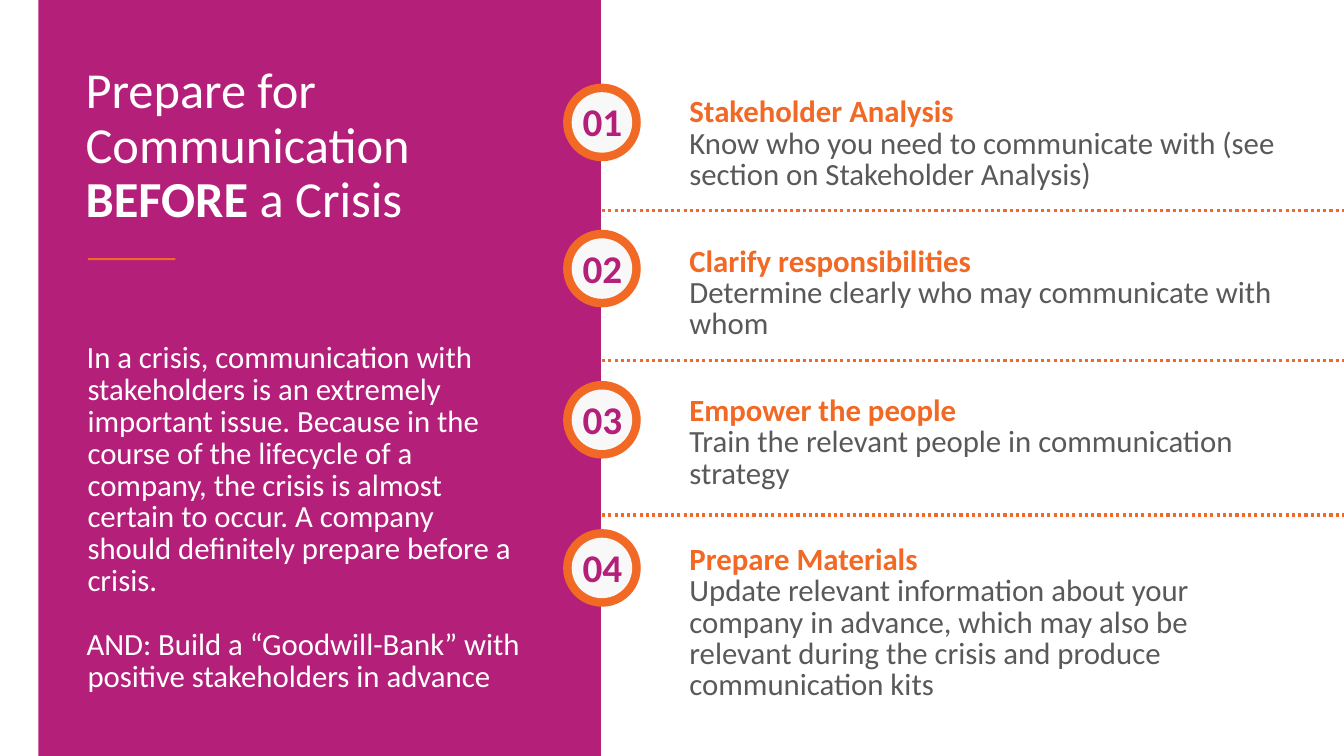
from dataclasses import dataclass

from lxml.etree import SubElement
from pptx import Presentation
from pptx.dml.color import RGBColor
from pptx.enum.dml import MSO_LINE
from pptx.enum.shapes import MSO_CONNECTOR, MSO_SHAPE
from pptx.oxml.ns import qn
from pptx.util import Inches, Pt

WIDTH, HEIGHT = Inches(13.33), Inches(7.5)


@dataclass(frozen=True)
class Theme:
    font: str = "Calibri"
    magenta: str = "B41F7A"
    orange: str = "F16924"
    grey: str = "595959"
    pale: str = "F8F8F8"
    white: str = "FFFFFF"
    title_size: float = 36
    number_size: float = 28
    body_size: float = 22


THEME = Theme()
AXIS = 44.79  # percent of the width where badges and dividers meet the panel
BADGE_CENTRES = (16.2, 35.53, 55.53, 75.13)
DIVIDERS = (27.87, 47.73, 68.13)

TITLE = [[("Prepare for Communication ", {}), ("BEFORE ", {"bold": True}), ("a Crisis", {})]]
INTRODUCTION = [
    "In a crisis, communication with stakeholders is an extremely important issue. "
    "Because in the course of the lifecycle of a company, the crisis is almost certain "
    "to occur. A company should definitely prepare before a crisis.",
    "AND: Build a “Goodwill-Bank” with positive stakeholders in advance",
]
STEPS = [
    ("Stakeholder Analysis",
     "Know who you need to communicate with (see section on Stakeholder Analysis)"),
    ("Clarify responsibilities",
     "Determine clearly who may communicate with whom"),
    ("Empower the people",
     "Train the relevant people in communication strategy"),
    ("Prepare Materials",
     "Update relevant information about your company in advance, which may also be "
     "relevant during the crisis and produce communication kits"),
]


def across(percent):
    return round(WIDTH * percent / 100)


def down(percent):
    return round(HEIGHT * percent / 100)


def place(left, top, width, height):
    """Turn percentages of the slide into a box in slide units."""
    return across(left), down(top), across(width), down(height)


def add_filled(shapes, kind, box, color):
    shape = shapes.add_shape(kind, *box)
    shape.shadow.inherit = False
    shape.fill.solid()
    shape.fill.fore_color.rgb = RGBColor.from_string(color)
    shape.line.fill.background()


def add_text(shapes, box, paragraphs, *, size, color, bold=False, spacing=None, gaps=(), hanging=0):
    """Write paragraphs of (text, format) runs; gaps maps a paragraph index to points before it."""
    frame = shapes.add_textbox(*box).text_frame
    frame.word_wrap = True
    gaps = dict(gaps)
    for index, runs in enumerate(paragraphs):
        paragraph = frame.paragraphs[0] if index == 0 else frame.add_paragraph()
        paragraph.line_spacing = spacing
        if index in gaps:
            paragraph.space_before = Pt(gaps[index])
        if hanging:
            properties = paragraph._p.get_or_add_pPr()
            properties.set("marL", str(hanging))
            properties.set("indent", str(-hanging))
        for text, style in runs:
            run = paragraph.add_run()
            run.text = text
            run.font.name = THEME.font
            run.font.size = Pt(size)
            run.font.bold = style.get("bold", bold)
            run.font.color.rgb = RGBColor.from_string(style.get("color", color))


def add_badge(slide, number, centre):
    shapes = slide.shapes.add_group_shape().shapes
    for share, color in ((10.27, THEME.orange), (8, THEME.pale)):
        diameter = down(share)
        box = (across(AXIS) - diameter // 2, down(centre) - diameter // 2, diameter, diameter)
        add_filled(shapes, MSO_SHAPE.OVAL, box, color)
    add_text(shapes, place(42.61, centre - 3.93, 4.58, 7.6), [[(f"{number:02}", {})]],
             size=THEME.number_size, color=THEME.magenta, bold=True)


def add_divider(slide, height):
    divider = slide.shapes.add_connector(
        MSO_CONNECTOR.STRAIGHT, across(AXIS), down(height), WIDTH, down(height))
    divider.line.color.rgb = RGBColor.from_string(THEME.orange)
    divider.line.width = Pt(2.25)
    divider.line.dash_style = MSO_LINE.ROUND_DOT
    SubElement(divider._element.spPr, qn("a:effectLst"))


def add_steps(slide):
    heading = {"bold": True, "color": THEME.orange}
    paragraphs = [[run] for title, detail in STEPS for run in ((title, heading), (detail, {}))]
    gaps = {index: 39.4 for index in range(2, len(paragraphs), 2)}
    add_text(slide.shapes, place(50.56, 12.27, 45.76, 85.33), paragraphs,
             size=THEME.body_size, color=THEME.grey, spacing=Pt(22.4), gaps=gaps)


def add_panel(slide):
    shapes = slide.shapes
    add_filled(shapes, MSO_SHAPE.RECTANGLE, place(2.85, 0, 41.86, 100), THEME.magenta)
    add_text(shapes, place(5.63, 8, 30, 44.4), TITLE,
             size=THEME.title_size, color=THEME.white, spacing=0.9)
    add_filled(shapes, MSO_SHAPE.RECTANGLE, place(6.53, 34.13, 6.53, 0.27), THEME.orange)
    add_text(shapes, place(5.7, 44.67, 33.75, 55.33), [[(text, {})] for text in INTRODUCTION],
             size=THEME.body_size, color=THEME.white, spacing=Pt(22.8),
             gaps={1: 22.8}, hanging=Inches(0.01))


def main():
    presentation = Presentation()
    presentation.slide_width, presentation.slide_height = WIDTH, HEIGHT
    slide = presentation.slides.add_slide(presentation.slide_layouts[6])
    add_steps(slide)
    add_panel(slide)
    for number, centre in enumerate(BADGE_CENTRES, start=1):
        add_badge(slide, number, centre)
    for height in DIVIDERS:
        add_divider(slide, height)
    presentation.save("out.pptx")


if __name__ == "__main__":
    main()
